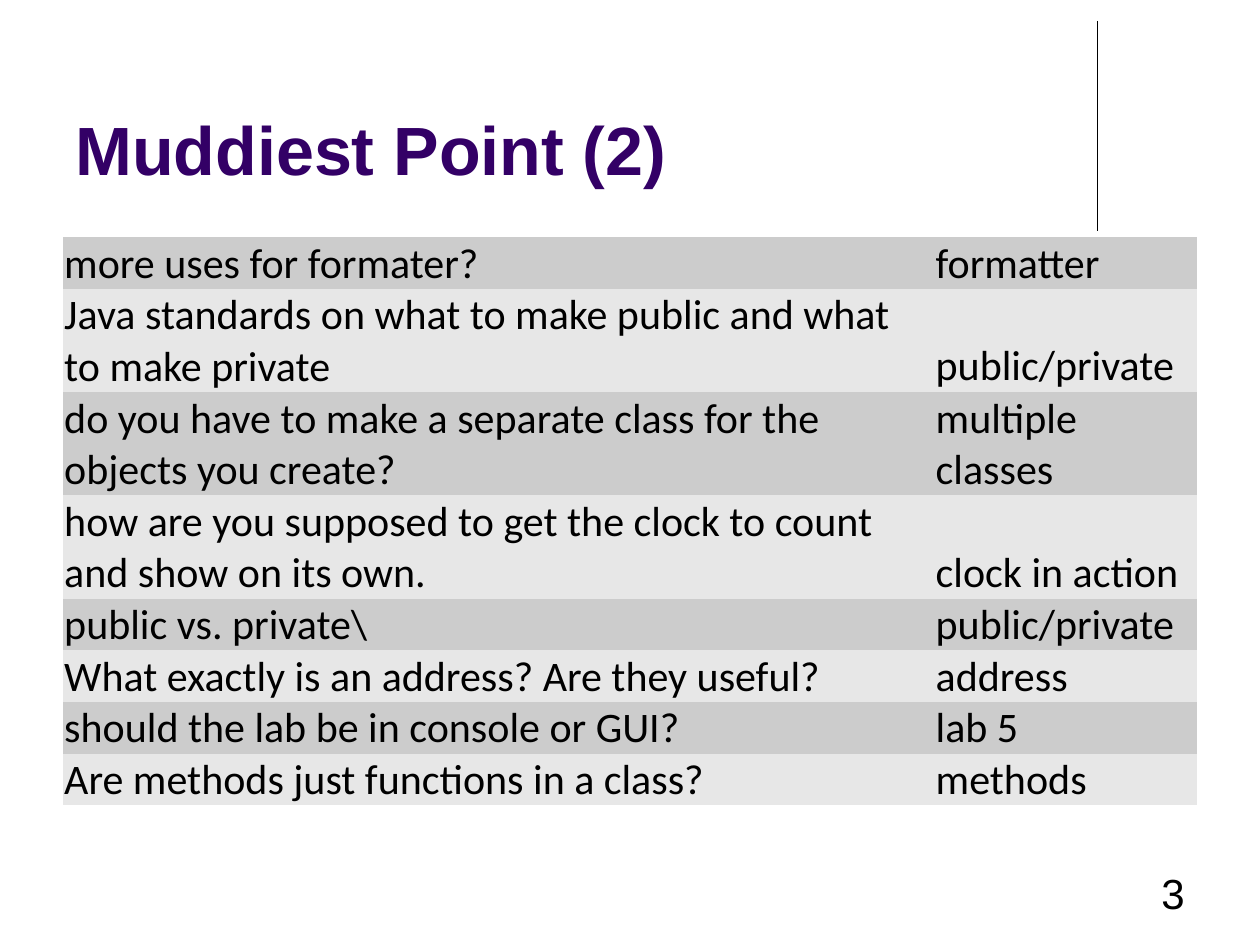
import pptx
import pptx.dml.color
import pptx.enum.shapes
import pptx.enum.text
import pptx.oxml.ns
import pptx.util
from lxml import etree

Pt = pptx.util.Pt
Color = pptx.dml.color.RGBColor
Anchor = pptx.enum.text.MSO_ANCHOR
Align = pptx.enum.text.PP_ALIGN
qn = pptx.oxml.ns.qn

BLACK = Color(0x00, 0x00, 0x00)
PURPLE = Color(0x33, 0x00, 0x66)
BANDS = (Color(0xCC, 0xCC, 0xCC), Color(0xE7, 0xE7, 0xE7))

TITLE = {"name": "Arial", "size": Pt(39), "bold": True}
NUMBER = {"name": "Arial", "size": Pt(24)}
BODY = {"name": "Calibri", "size": Pt(24)}
CELL = {
    "margin_left": Pt(0.72),
    "margin_right": Pt(0.72),
    "margin_top": Pt(0.72),
    "margin_bottom": Pt(0),
    "vertical_anchor": Anchor.BOTTOM,
}
WIDTHS = (498, 150)
LINE = 29.5

ROWS = (
    ("more uses for formater?", "formatter", 1),
    ("Java standards on what to make public and what to make private", "public/private", 2),
    ("do you have to make a separate class for the objects you create?", "multiple classes", 2),
    ("how are you supposed to get the clock to count and show on its own.", "clock in action", 2),
    ("public vs. private\\", "public/private", 1),
    ("What exactly is an address? Are they useful?", "address", 1),
    ("should the lab be in console or GUI?", "lab 5", 1),
    ("Are methods just functions in a class?", "methods", 1),
)


def apply(target, values):
    for key, value in values.items():
        setattr(target, key, value)


def write(frame, text, style, color, align=Align.LEFT):
    para = frame.paragraphs[0]
    para.alignment = align
    run = para.add_run()
    run.text = text
    apply(run.font, style)
    run.font.color.rgb = color


def add_text(slide, box, text, style, color, anchor, align=Align.LEFT):
    frame = slide.shapes.add_textbox(*map(Pt, box)).text_frame
    apply(frame, {"word_wrap": True, "vertical_anchor": anchor})
    write(frame, text, style, color, align)


def add_rule(slide, x, top, end):
    kind = pptx.enum.shapes.MSO_CONNECTOR.STRAIGHT
    rule = slide.shapes.add_connector(kind, Pt(x), Pt(top), Pt(x), Pt(end))
    rule.line.color.rgb = BLACK
    rule.line.width = Pt(0.75)
    etree.SubElement(rule._element.spPr, qn("a:effectLst"))


def fill_cell(cell, text, color):
    apply(cell, CELL)
    props = cell._tc.get_or_add_tcPr()
    for side in ("a:lnL", "a:lnR", "a:lnT", "a:lnB"):
        edge = etree.SubElement(props, qn(side), w="0")
        etree.SubElement(edge, qn("a:noFill"))
    cell.fill.solid()
    cell.fill.fore_color.rgb = color
    write(cell.text_frame, text, BODY, BLACK)


def add_grid(slide, left, top):
    height = LINE * sum(row[-1] for row in ROWS)
    box = map(Pt, (left, top, sum(WIDTHS), height))
    table = slide.shapes.add_table(len(ROWS), len(WIDTHS), *box).table
    apply(table, {"first_row": False, "horz_banding": False})
    for column, width in zip(table.columns, WIDTHS):
        column.width = Pt(width)
    for i, (*texts, lines) in enumerate(ROWS):
        table.rows[i].height = Pt(LINE * lines)
        for j, text in enumerate(texts):
            fill_cell(table.cell(i, j), text, BANDS[i % 2])


def main():
    deck = pptx.Presentation()
    apply(deck, {"slide_width": Pt(720), "slide_height": Pt(540)})
    slide = deck.slides.add_slide(deck.slide_layouts[6])
    add_rule(slide, 627, 12, 132)
    add_text(slide, (36, 9.5, 594, 102), "Muddiest Point (2)", TITLE, PURPLE, Anchor.BOTTOM)
    add_grid(slide, 36, 135.5)
    add_text(slide, (516, 492, 168, 36), "3", NUMBER, BLACK, Anchor.TOP, Align.RIGHT)
    deck.save("out.pptx")


if __name__ == "__main__":
    main()
